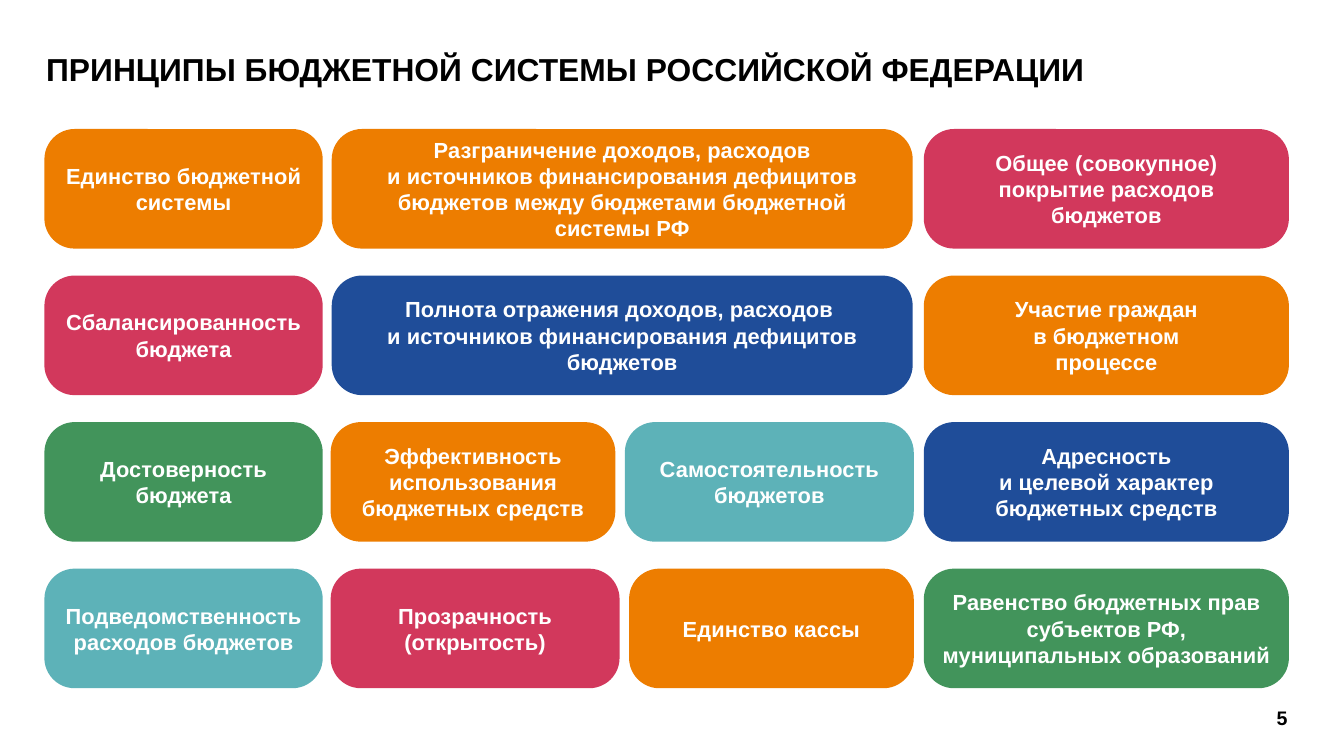
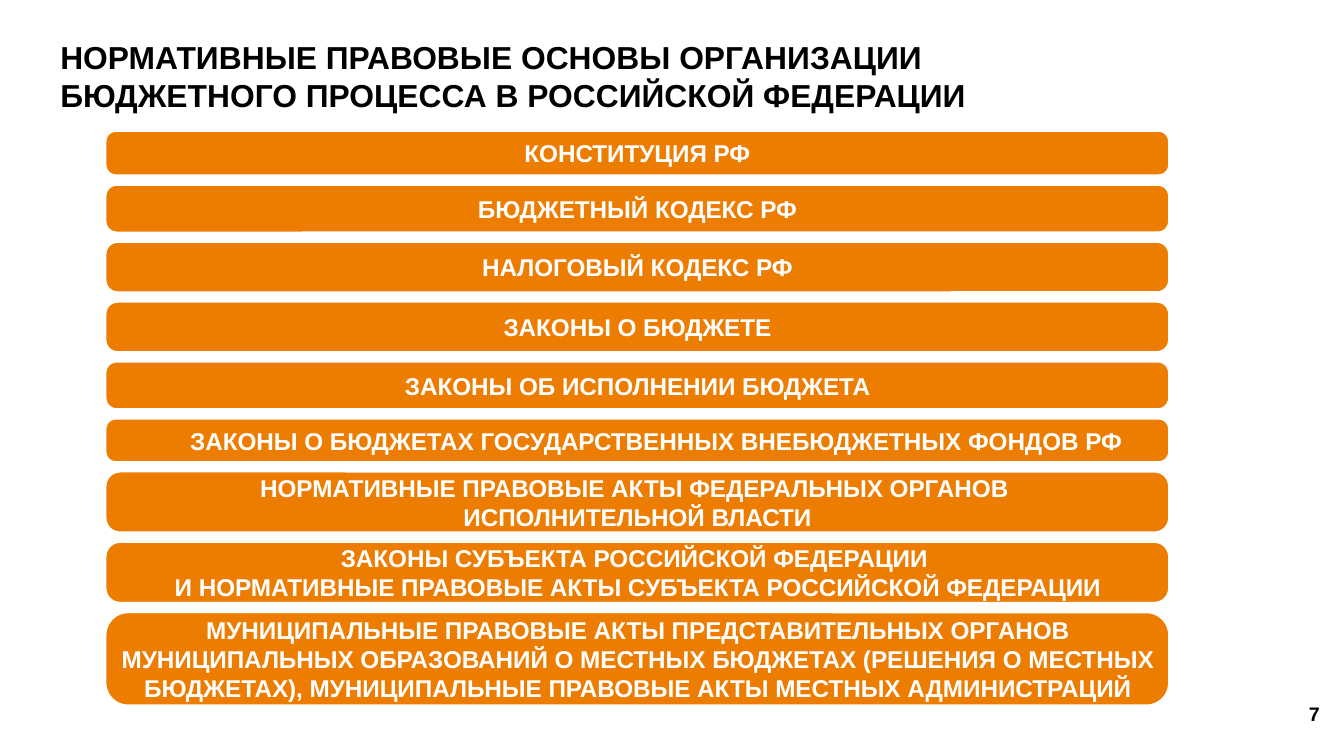
"""Build two slides on the principles and legal basis of the Russian budget system."""
import copy
from typing import NamedTuple

import pptx
import pptx.dml.color
import pptx.enum.shapes
import pptx.enum.text
import pptx.oxml.ns
import pptx.shapes.autoshape
import pptx.slide
import pptx.util

Cm = pptx.util.Cm
Align = pptx.enum.text.PP_ALIGN
Anchor = pptx.enum.text.MSO_ANCHOR

FONT = "Arial"
BLACK, WHITE = "000000", "FFFFFF"
ORANGE, RED, BLUE, GREEN, TEAL = "ED7D00", "D2385C", "1F4D99", "42945B", "5DB2B8"
CORNER = 0.253
INSET = 0.1
CONTENT_TOP = 2.44

CARD_HEIGHT, CARD_PITCH = 2.26, 2.77
CARD_SIZE = 11.7
LINE_HEIGHT = 0.5

BAR_LEFT, BAR_WIDTH, BAR_GAP = 1.96, 20.17, 0.11


class Box(NamedTuple):
    left: float
    top: float
    width: float
    height: float


class Column(NamedTuple):
    left: float
    width: float


class Card(NamedTuple):
    column: Column
    color: str
    text: str
    label_width: float
    lines: int


class Bar(NamedTuple):
    height: float
    text: str
    indent: float = 0


FIRST = Column(0.84, 5.26)
WIDE = Column(6.27, 10.98)
LAST = Column(17.46, 6.9)

CARD_ROWS = [
    [
        Card(FIRST, ORANGE, "Единство бюджетной системы", 4.95, 2),
        Card(WIDE, ORANGE, "Разграничение доходов, расходов\nи источников финансирования дефицитов "
             "бюджетов между бюджетами бюджетной системы РФ", 10.19, 4),
        Card(LAST, RED, "Общее (совокупное) покрытие расходов бюджетов", 6.17, 3),
    ],
    [
        Card(FIRST, RED, "Сбалансированность бюджета", 4.95, 2),
        Card(WIDE, BLUE, "Полнота отражения доходов, расходов \n"
             "и источников финансирования дефицитов бюджетов", 10.46, 3),
        Card(LAST, ORANGE, "Участие граждан\nв бюджетном процессе", 4.93, 3),
    ],
    [
        Card(FIRST, GREEN, "Достоверность бюджета", 4.95, 2),
        Card(Column(6.25, 5.38), ORANGE, "Эффективность использования бюджетных средств", 4.72, 3),
        Card(Column(11.81, 5.46), TEAL, "Самостоятельность бюджетов", 4.72, 2),
        Card(LAST, BLUE, "Адресность\nи целевой характер бюджетных средств", 4.72, 3),
    ],
    [
        Card(FIRST, TEAL, "Подведомственность расходов бюджетов", 4.95, 2),
        Card(Column(6.25, 5.46), RED, "Прозрачность (открытость)", 4.72, 2),
        Card(Column(11.89, 5.38), ORANGE, "Единство кассы", 4.72, 1),
        Card(LAST, GREEN, "Равенство бюджетных прав субъектов РФ, муниципальных образований", 6.45, 3),
    ],
]

BARS = [
    Bar(0.91, "КОНСТИТУЦИЯ РФ"),
    Bar(0.97, "БЮДЖЕТНЫЙ КОДЕКС РФ"),
    Bar(1.02, "НАЛОГОВЫЙ КОДЕКС РФ"),
    Bar(1.02, "ЗАКОНЫ О БЮДЖЕТЕ"),
    Bar(0.97, "ЗАКОНЫ ОБ ИСПОЛНЕНИИ БЮДЖЕТА"),
    Bar(0.89, "ЗАКОНЫ О БЮДЖЕТАХ ГОСУДАРСТВЕННЫХ ВНЕБЮДЖЕТНЫХ ФОНДОВ РФ", 0.69),
    Bar(1.22, "НОРМАТИВНЫЕ ПРАВОВЫЕ АКТЫ ФЕДЕРАЛЬНЫХ ОРГАНОВ \nИСПОЛНИТЕЛЬНОЙ ВЛАСТИ"),
    Bar(1.22, "ЗАКОНЫ СУБЪЕКТА РОССИЙСКОЙ ФЕДЕРАЦИИ \n"
        "И НОРМАТИВНЫЕ ПРАВОВЫЕ АКТЫ СУБЪЕКТА РОССИЙСКОЙ ФЕДЕРАЦИИ"),
    Bar(1.83, "МУНИЦИПАЛЬНЫЕ ПРАВОВЫЕ АКТЫ ПРЕДСТАВИТЕЛЬНЫХ ОРГАНОВ "
        "МУНИЦИПАЛЬНЫХ ОБРАЗОВАНИЙ О МЕСТНЫХ БЮДЖЕТАХ (РЕШЕНИЯ О МЕСТНЫХ "
        "БЮДЖЕТАХ), МУНИЦИПАЛЬНЫЕ ПРАВОВЫЕ АКТЫ МЕСТНЫХ АДМИНИСТРАЦИЙ"),
]


def rgb(color: str) -> pptx.dml.color.RGBColor:
    return pptx.dml.color.RGBColor.from_string(color)


def write_text(shape: pptx.shapes.autoshape.Shape, text: str, *, size: float,
               color: str = WHITE, align: Align = Align.CENTER,
               anchor: Anchor = Anchor.MIDDLE, indent: float = 0) -> None:
    frame = shape.text_frame
    frame.word_wrap = True
    frame.vertical_anchor = anchor
    frame.margin_left = Cm(INSET + indent)
    frame.margin_top = frame.margin_right = frame.margin_bottom = Cm(INSET)
    paragraph = frame.paragraphs[0]
    paragraph.text = text
    paragraph.alignment = align
    for run in paragraph.runs:
        run.font.name = FONT
        run.font.size = pptx.util.Pt(size)
        run.font.bold = True
        run.font.color.rgb = rgb(color)
    for line_break in paragraph._p.findall(pptx.oxml.ns.qn("a:br")):
        line_break.append(copy.deepcopy(paragraph.runs[0]._r.rPr))


def add_text(shapes, box: Box, text: str, **text_format) -> None:
    write_text(shapes.add_textbox(*map(Cm, box)), text, **text_format)


def add_panel(shapes, box: Box, color: str) -> pptx.shapes.autoshape.Shape:
    kind = pptx.enum.shapes.MSO_SHAPE.ROUNDED_RECTANGLE
    panel = shapes.add_shape(kind, *map(Cm, box))
    panel.adjustments[0] = CORNER
    panel.shadow.inherit = False
    panel.fill.solid()
    panel.fill.fore_color.rgb = rgb(color)
    panel.line.fill.background()
    return panel


def add_card(slide: pptx.slide.Slide, card: Card, top: float) -> None:
    group = slide.shapes.add_group_shape()
    column = card.column
    add_panel(group.shapes, Box(column.left, top, column.width, CARD_HEIGHT), card.color)
    height = card.lines * LINE_HEIGHT + 2 * INSET
    label = Box(column.left + (column.width - card.label_width) / 2,
                top + (CARD_HEIGHT - height) / 2, card.label_width, height)
    add_text(group.shapes, label, card.text, size=CARD_SIZE)


def add_bar(slide: pptx.slide.Slide, bar: Bar, top: float) -> None:
    panel = add_panel(slide.shapes, Box(BAR_LEFT, top, BAR_WIDTH, bar.height), ORANGE)
    panel.line.color.rgb = rgb(WHITE)
    panel.line.width = pptx.util.Pt(3)
    write_text(panel, bar.text, size=13, indent=bar.indent)


def add_slide(presentation, title: str, title_box: Box, align: Align,
              number: str, number_box: Box) -> pptx.slide.Slide:
    slide = presentation.slides.add_slide(presentation.slide_layouts[6])
    add_text(slide.shapes, title_box, title, size=17, color=BLACK,
             align=align, anchor=Anchor.TOP)
    add_text(slide.shapes, number_box, number, size=10.5, color=BLACK)
    return slide


def build_principles(presentation) -> None:
    slide = add_slide(presentation, "ПРИНЦИПЫ БЮДЖЕТНОЙ СИСТЕМЫ РОССИЙСКОЙ ФЕДЕРАЦИИ",
                      Box(0.2, 0.84, 20.98, 0.91), Align.CENTER,
                      "5", Box(23.72, 13.18, 1.02, 0.76))
    for index, row in enumerate(CARD_ROWS):
        for card in row:
            add_card(slide, card, CONTENT_TOP + index * CARD_PITCH)


def build_legal_basis(presentation) -> None:
    slide = add_slide(presentation, "НОРМАТИВНЫЕ ПРАВОВЫЕ ОСНОВЫ ОРГАНИЗАЦИИ "
                      "БЮДЖЕТНОГО ПРОЦЕССА В РОССИЙСКОЙ ФЕДЕРАЦИИ",
                      Box(1.04, 0.61, 20.04, 1.65), Align.LEFT,
                      "7", Box(24.33, 13.11, 1.02, 0.76))
    top = CONTENT_TOP
    for bar in BARS:
        add_bar(slide, bar, top)
        top += bar.height + BAR_GAP


def main() -> None:
    presentation = pptx.Presentation()
    presentation.slide_width = Cm(25.4)
    presentation.slide_height = Cm(14.29)
    build_principles(presentation)
    build_legal_basis(presentation)
    presentation.save("out.pptx")


if __name__ == "__main__":
    main()
